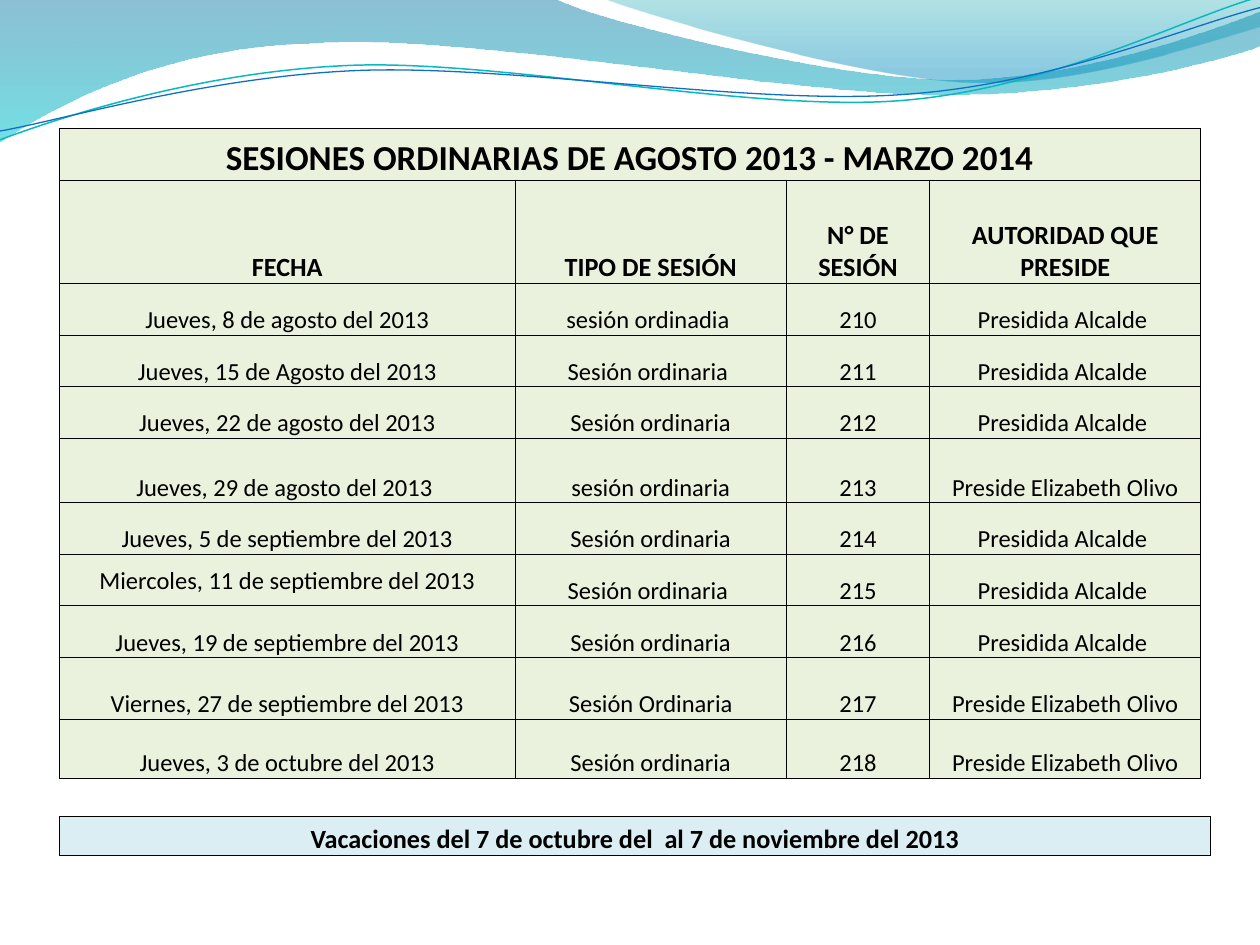
"""Build the slide listing the ordinary sessions under a wave banner."""
from math import cos, radians, sin
from lxml.etree import SubElement
from pptx import Presentation
from pptx.dml.color import RGBColor
from pptx.enum.text import MSO_ANCHOR, PP_ALIGN
from pptx.oxml import parse_xml
from pptx.oxml.ns import nsdecls, qn
from pptx.util import Inches, Pt

COLORS = {
    "text": "000000", "green": "EAF1DD", "pale": "DBEEF3",
    "blue": "0074A1", "cyan": "00C6CF", "teal": "00A1A9", "sky": "008BBF",
    "aqua": "0AB8BF", "navy": "0F6FC6",
}
TITLE = "SESIONES ORDINARIAS DE AGOSTO 2013 - MARZO 2014"
HEADS = ["FECHA", "TIPO DE SESIÓN", "N° DE SESIÓN", "AUTORIDAD QUE PRESIDE"]
MAYOR, DEPUTY = "Presidida Alcalde ", "Preside Elizabeth Olivo"
FIRST = 210
SESSIONS = [
    ("Jueves, 8 de agosto del 2013", "sesión ordinadia ", MAYOR),
    ("Jueves, 15 de Agosto del 2013", "Sesión ordinaria ", MAYOR),
    ("Jueves, 22 de agosto del 2013", "Sesión ordinaria", MAYOR),
    ("Jueves, 29 de agosto del 2013 ", "sesión ordinaria", DEPUTY),
    ("Jueves, 5 de septiembre del 2013", "Sesión ordinaria", MAYOR),
    ("Miercoles, 11 de septiembre del 2013", "Sesión ordinaria ", MAYOR),
    ("Jueves, 19 de septiembre del 2013", "Sesión ordinaria", MAYOR),
    ("Viernes, 27 de septiembre del 2013", "Sesión Ordinaria", DEPUTY),
    ("Jueves, 3 de octubre del 2013", "Sesión ordinaria", DEPUTY),
]
BREAK = "Vacaciones del 7 de octubre del  al 7 de noviembre del 2013"
COLS = [3.62, 2.15, 1.14, 2.15]
ROWS = [0.41, 0.82, 0.41, 0.41, 0.41, 0.51, 0.41, 0.41, 0.41, 0.49, 0.47]
LEFT = 0.47

BANDS = [
    ((-0.01, -0.01, 10.02, 1.14),
     [(0, 0), (4.4, -0.01), (4.76, 0.17, 6.64, 0.63, 7.58, 0.63),
      (8.53, 0.63, 9.58, 0.26, 10, 0.09), (10.01, 0.36),
      (9.83, 0.44, 8.7, 0.76, 7.46, 0.75), (6.22, 0.75, 3.82, 0.28, 2.57, 0.34),
      (1.29, 0.36, 0.46, 0.83, -0.01, 1.13), (0, 0)],
     [(0, "blue", 45), (100, "cyan", 55)]),
    ((4.79, -0.01, 5.21, 0.7),
     [(4.79, -0.01), (5.09, 0.11, 6.82, 0.62, 7.69, 0.65),
      (8.56, 0.69, 9.61, 0.32, 10, 0.21), (10, 0), (4.79, -0.01)],
     [(0, "teal", 30), (80, "sky", 45)]),
]
WAVES = [
    ((-0.02, 0.22, 10.02, 0.71),
     [(0, 1.11), (0.48, 0.93, 1.58, 0.57, 2.77, 0.52),
      (3.95, 0.47, 5.93, 0.89, 7.13, 0.8), (8.33, 0.71, 9.38, 0.15, 9.98, -0.02)],
     "aqua", 0.85),
    ((-0.02, 0.3, 10.03, 0.58),
     [(0, 1.04), (0.47, 0.96, 1.64, 0.61, 2.83, 0.56),
      (4.03, 0.51, 5.97, 0.84, 7.17, 0.75), (8.36, 0.67, 9.41, 0.21, 10, 0.06)],
     "navy", 0.75),
]
TILT = -2.7


def color(name):
    return RGBColor.from_string(COLORS[name])


def add_path(slide, box, path, tilt=0):
    """Draw lines and cubic curves in a box that is then turned by tilt."""
    left, top, width, height = box
    pen = slide.shapes.build_freeform(Inches(left), Inches(top))
    pen.add_line_segments([(Inches(left + width), Inches(top + height))], close=False)
    shape = pen.convert_to_shape()
    shape.shadow.inherit = False
    shape.rotation = tilt % 360
    turn = radians(-tilt)
    mid_x, mid_y = left + width / 2, top + height / 2
    outline = shape._element.spPr.find(".//" + qn("a:path"))
    for child in list(outline):
        outline.remove(child)
    for i, part in enumerate(path):
        tag = "moveTo" if i == 0 else "lnTo" if len(part) == 2 else "cubicBezTo"
        step = SubElement(outline, qn(f"a:{tag}"))
        for x, y in zip(part[::2], part[1::2]):
            dx, dy = x - mid_x, y - mid_y
            px = dx * cos(turn) - dy * sin(turn) + width / 2
            py = dx * sin(turn) + dy * cos(turn) + height / 2
            SubElement(step, qn("a:pt"), x=str(Inches(px)), y=str(Inches(py)))
    if path[0] == path[-1]:
        outline.remove(outline[-1])
        SubElement(outline, qn("a:close"))
    return shape


def add_band(slide, box, path, stops):
    shape = add_path(slide, box, path)
    shape.line.fill.background()
    marks = "".join(
        f'<a:gs pos="{pos * 1000}"><a:srgbClr val="{COLORS[name]}">'
        f'<a:alpha val="{alpha * 1000}"/></a:srgbClr></a:gs>'
        for pos, name, alpha in stops)
    fill = parse_xml(f'<a:gradFill {nsdecls("a")} rotWithShape="1"><a:gsLst>{marks}'
                     '</a:gsLst><a:lin ang="5400000" scaled="0"/></a:gradFill>')
    shape._element.spPr.find(qn("a:custGeom")).addnext(fill)


def add_wave(slide, box, path, name, width):
    shape = add_path(slide, box, path, TILT)
    shape.fill.background()
    shape.line.color.rgb = color(name)
    shape.line.width = Pt(width)


def set_cell(cell, text, size, bold, fill):
    props = cell._tc.get_or_add_tcPr()
    for side in "LRTB":
        edge = SubElement(props, qn(f"a:ln{side}"), w=str(Pt(0.5)))
        solid = SubElement(edge, qn("a:solidFill"))
        SubElement(solid, qn("a:srgbClr"), val=COLORS["text"])
    cell.fill.solid()
    cell.fill.fore_color.rgb = color(fill)
    cell.margin_left = cell.margin_right = cell.margin_top = Inches(0.01)
    cell.margin_bottom = 0
    cell.vertical_anchor = MSO_ANCHOR.BOTTOM
    cell.text_frame.text = text
    line = cell.text_frame.paragraphs[0]
    line.alignment = PP_ALIGN.CENTER
    for run in line.runs:
        font = run.font
        font.name, font.size, font.bold = "Calibri", Pt(size), bold
        font.color.rgb = color("text")


def add_grid(slide, top, cols, rows):
    frame = slide.shapes.add_table(len(rows), len(cols), Inches(LEFT), Inches(top),
                                   Inches(sum(cols)), Inches(sum(rows)))
    table = frame.table
    table.first_row = table.horz_banding = False
    for col, width in zip(table.columns, cols):
        col.width = Inches(width)
    for row, height in zip(table.rows, rows):
        row.height = Inches(height)
    return table


def main():
    deck = Presentation()
    deck.slide_width, deck.slide_height = Inches(10), Inches(7.5)
    slide = deck.slides.add_slide(deck.slide_layouts[6])
    for band in BANDS:
        add_band(slide, *band)
    for wave in WAVES:
        add_wave(slide, *wave)

    table = add_grid(slide, 1.02, COLS, ROWS)
    body = [(date, kind, str(FIRST + i), chair)
            for i, (date, kind, chair) in enumerate(SESSIONS)]
    grid = [[TITLE, "", "", ""], HEADS, *body]
    for r, texts in enumerate(grid):
        for c, text in enumerate(texts):
            size = (20, 15)[r] if r < 2 else 14
            set_cell(table.cell(r, c), text, size, r < 2, "green")
    table.cell(0, 0).merge(table.cell(0, len(COLS) - 1))
    table.cell(7, 0).vertical_anchor = MSO_ANCHOR.MIDDLE

    note = add_grid(slide, 6.48, [9.14], [0.31])
    set_cell(note.cell(0, 0), BREAK, 15, True, "pale")
    deck.save("out.pptx")


if __name__ == "__main__":
    main()
